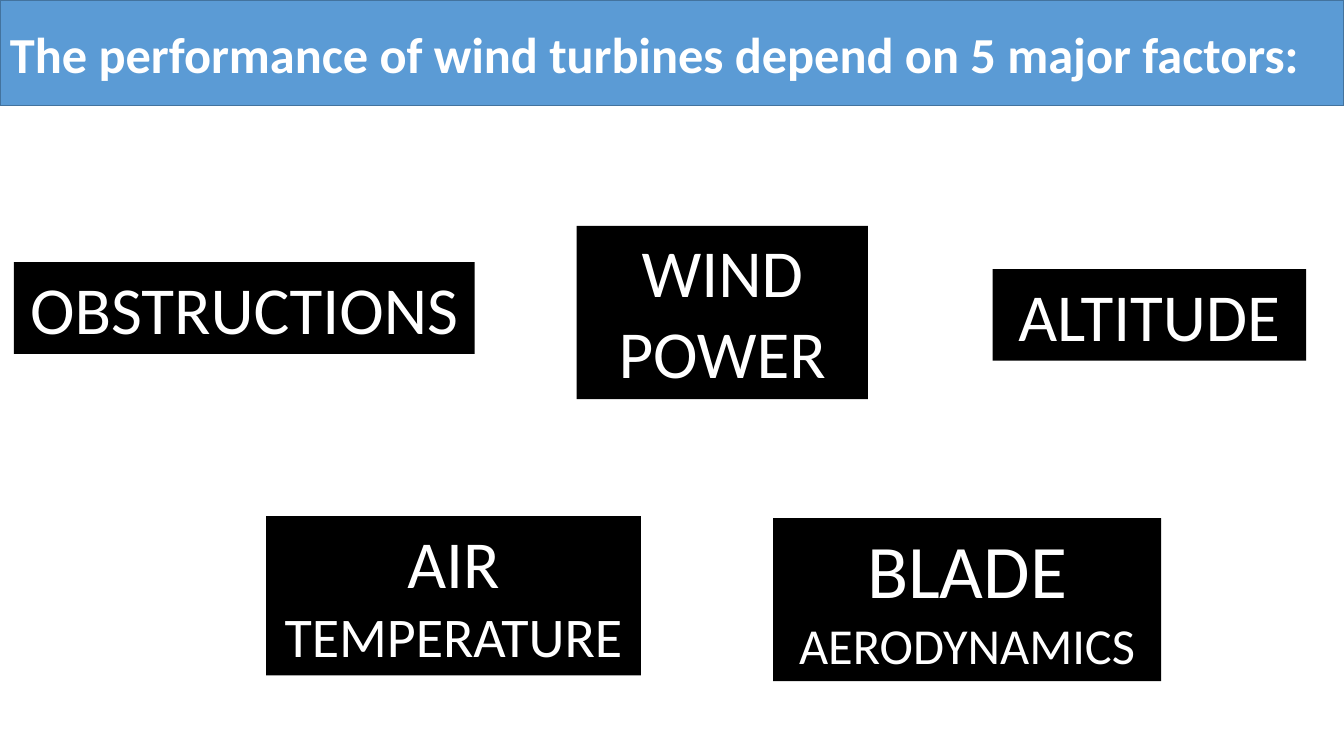
from pptx import Presentation
from pptx.dml.color import RGBColor
from pptx.enum.shapes import MSO_SHAPE
from pptx.enum.text import MSO_ANCHOR, MSO_AUTO_SIZE, PP_ALIGN
from pptx.util import Pt

RECTANGLE = MSO_SHAPE.RECTANGLE
TOP = MSO_ANCHOR.TOP
GROW = MSO_AUTO_SIZE.SHAPE_TO_FIT_TEXT
LEFT, CENTER = PP_ALIGN.LEFT, PP_ALIGN.CENTER

WHITE, BLACK = "FFFFFF", "000000"
BLUE, DARK_BLUE = "5B9BD5", "43739E"
FONT = "Calibri"

# Left, top, width and height, then each line with its size
FACTORS = [
    ((412, 161.3, 208, 123.8), [("WIND POWER", 48)]),
    ((190, 368.6, 267.8, 113.8), [("AIR", 48), ("TEMPERATURE", 40)]),
    ((552.2, 370, 277.2, 116.6), [("BLADE", 54), ("AERODYNAMICS", 36)]),
    ((10, 187.2, 329, 65.5), [("OBSTRUCTIONS", 48)]),
    ((709, 192.2, 224, 65.5), [("ALTITUDE", 48)]),
]


def color(hex_code):
    return RGBColor.from_string(hex_code)


def set_attributes(target, values):
    for name, value in values.items():
        setattr(target, name, value)


def write_lines(frame, lines, alignment, bold=False):
    """Fill a text frame with one paragraph per (text, size) pair."""
    set_attributes(frame, {"word_wrap": True, "auto_size": GROW,
                           "vertical_anchor": TOP})
    for index, (text, size) in enumerate(lines):
        paragraph = frame.add_paragraph() if index else frame.paragraphs[0]
        paragraph.alignment = alignment
        run = paragraph.add_run()
        run.text = text
        set_attributes(run.font, {"name": FONT, "size": Pt(size), "bold": bold})
        run.font.color.rgb = color(WHITE)


def add_rectangle(slide, box, fill, outline=None):
    rectangle = slide.shapes.add_shape(RECTANGLE, *map(Pt, box))
    rectangle.shadow.inherit = False
    rectangle.fill.solid()
    rectangle.fill.fore_color.rgb = color(fill)
    if outline:
        rectangle.line.color.rgb = color(outline)
        rectangle.line.width = Pt(1)
    else:
        rectangle.line.fill.background()
    return rectangle


def add_title(slide, text):
    add_rectangle(slide, (0, 0, 960, 75.6), BLUE, DARK_BLUE)
    title = slide.shapes.add_textbox(*map(Pt, (0, 13, 978.5, 51)))
    write_lines(title.text_frame, [(text, 36)], LEFT, bold=True)


def add_factor(slide, box, lines):
    factor = add_rectangle(slide, box, BLACK)
    write_lines(factor.text_frame, lines, CENTER)


def main():
    deck = Presentation()
    set_attributes(deck, {"slide_width": Pt(960), "slide_height": Pt(540)})
    slide = deck.slides.add_slide(deck.slide_layouts[6])
    add_title(slide, "The performance of wind turbines depend on 5 major factors:")
    for box, lines in FACTORS:
        add_factor(slide, box, lines)
    deck.save("out.pptx")


if __name__ == "__main__":
    main()
